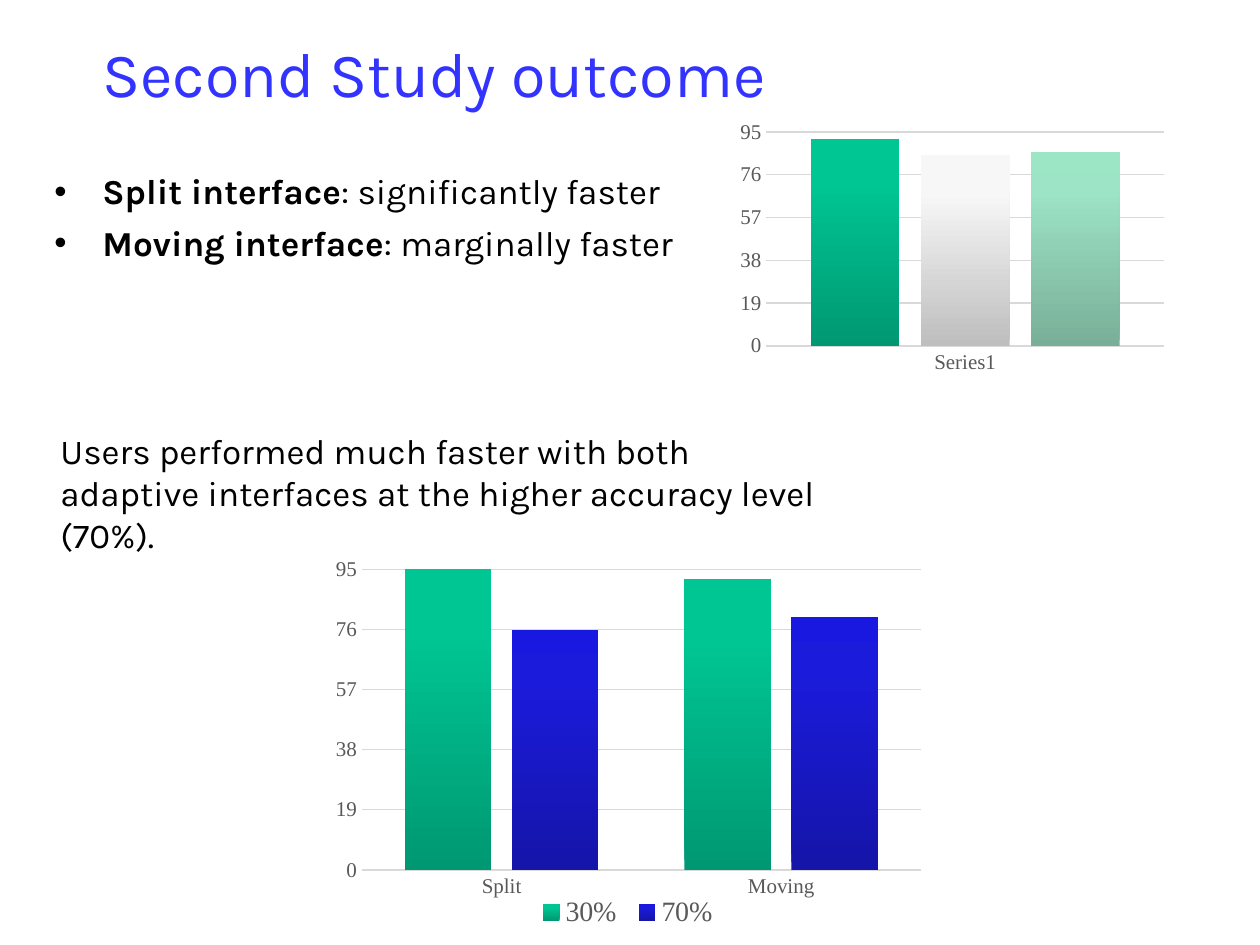
from dataclasses import dataclass

from lxml import etree
from pptx import Presentation
from pptx.chart.data import CategoryChartData
from pptx.dml.color import RGBColor
from pptx.enum.chart import XL_CHART_TYPE, XL_LEGEND_POSITION, XL_TICK_MARK
from pptx.enum.text import MSO_ANCHOR, MSO_AUTO_SIZE, PP_ALIGN
from pptx.oxml.ns import qn
from pptx.util import Emu, Pt

COLUMNS = XL_CHART_TYPE.COLUMN_CLUSTERED
BOTTOM = XL_LEGEND_POSITION.BOTTOM
NO_TICK = XL_TICK_MARK.NONE
MIDDLE = MSO_ANCHOR.MIDDLE
NO_FIT, GROW = MSO_AUTO_SIZE.NONE, MSO_AUTO_SIZE.SHAPE_TO_FIT_TEXT
CENTER = PP_ALIGN.CENTER
TITLE_ONLY = 5
EMU_PER_PX = 914400 / 126


@dataclass(frozen=True)
class Theme:
    text_font: str = "Karla"
    chart_font: str = "Times New Roman"
    title_size: int = 36
    body_size: int = 20
    axis_size: int = 12
    legend_size: int = 16
    title: str = "3333FF"
    body: str = "000000"
    label: str = "595959"
    grid: str = "D9D9D9"
    # Bar gradients, from the foot of the bar to its top
    green: tuple = ("009872", "00C694", "00C795")
    blue: tuple = ("1515A9", "1B1BDC", "1818E1")
    grey: tuple = ("BEBEBE", "F7F7F7", "F8F8F8")
    mint: tuple = ("79AF98", "9DE3C5", "9CE6C6")


THEME = Theme()
GRADIENT_STOPS = (0, 80, 100)


def px(length):
    return Emu(round(length * EMU_PER_PX))


def apply(target, formats):
    for name, value in formats.items():
        setattr(target, name, value)


def style_font(font, name, size, color, bold=False):
    apply(font, {"name": name, "size": Pt(size), "bold": bold})
    font.color.rgb = RGBColor.from_string(color)


def add_span(para, text, size, color, bold=False):
    span = para.add_run()
    span.text = text
    style_font(span.font, THEME.text_font, size, color, bold)


def set_indent(para, margin, first_line):
    properties = para._p.get_or_add_pPr()
    properties.set("marL", str(px(margin)))
    properties.set("indent", str(px(first_line)))
    return properties


def add_title(page, box, text):
    title = page.shapes.title
    apply(title, dict(zip(("left", "top", "width", "height"), map(px, box))))
    frame = title.text_frame
    apply(frame, {"vertical_anchor": MIDDLE, "auto_size": NO_FIT, "word_wrap": True})
    para = frame.paragraphs[0]
    para.alignment = CENTER
    add_span(para, text, THEME.title_size, THEME.title)


def add_text_frame(page, box, fit):
    frame = page.shapes.add_textbox(*map(px, box)).text_frame
    apply(frame, {"word_wrap": True, "auto_size": fit})
    return frame


def add_findings(page, box, findings):
    frame = add_text_frame(page, box, NO_FIT)
    for index, (subject, finding) in enumerate(findings):
        para = frame.add_paragraph() if index else frame.paragraphs[0]
        apply(para, {"line_spacing": 0.9, "space_before": Pt(8)})
        properties = set_indent(para, 48, -48)
        etree.SubElement(properties, qn("a:buFont"), typeface="Arial")
        etree.SubElement(properties, qn("a:buChar"), char="•")
        add_span(para, subject, THEME.body_size, THEME.body, bold=True)
        add_span(para, f": {finding}", THEME.body_size, THEME.body)


def add_conclusion(page, box, text):
    para = add_text_frame(page, box, GROW).paragraphs[0]
    set_indent(para, 92, 0)
    add_span(para, text, THEME.body_size, THEME.body)


def place_inside_chart(element, index, fractions, inner=False):
    """Give a plot area or legend a fixed place, in fractions of the chart."""
    for old in element.findall(qn("c:layout")):
        element.remove(old)
    layout = etree.Element(qn("c:layout"))
    manual = etree.SubElement(layout, qn("c:manualLayout"))
    if inner:
        etree.SubElement(manual, qn("c:layoutTarget"), val="inner")
    for mode in ("xMode", "yMode"):
        etree.SubElement(manual, qn(f"c:{mode}"), val="edge")
    for name, value in zip("xywh", fractions):
        etree.SubElement(manual, qn(f"c:{name}"), val=str(value))
    element.insert(index, layout)


def fill_bars(series, colors):
    series.format.fill.gradient()
    gradient = series._element.find(qn("c:spPr")).find(qn("a:gradFill"))
    for child in list(gradient):
        gradient.remove(child)
    stops = etree.SubElement(gradient, qn("a:gsLst"))
    for position, color in zip(GRADIENT_STOPS, colors):
        stop = etree.SubElement(stops, qn("a:gs"), pos=str(position * 1000))
        etree.SubElement(stop, qn("a:srgbClr"), val=color)
    etree.SubElement(gradient, qn("a:lin"), ang=str(270 * 60000), scaled="0")


def style_axes(chart):
    category, value = chart.category_axis, chart.value_axis
    for axis in (category, value):
        apply(axis, {"major_tick_mark": NO_TICK, "minor_tick_mark": NO_TICK})
        style_font(axis.tick_labels.font, THEME.chart_font, THEME.axis_size, THEME.label)
    apply(value, {"minimum_scale": 0, "maximum_scale": 95, "major_unit": 19,
                  "has_major_gridlines": True})
    apply(value.tick_labels, {"number_format": "#,##0", "number_format_is_linked": False})
    value.format.line.fill.background()
    for line, width in ((category.format.line, 1), (value.major_gridlines.format.line, 0.75)):
        line.color.rgb = RGBColor.from_string(THEME.grid)
        line.width = Pt(width)


def add_column_chart(page, box, categories, bars, plot_place, legend_place=None):
    """bars holds (name, values, gradient colors) for each series."""
    data = CategoryChartData()
    data.categories = categories
    for name, values, _ in bars:
        data.add_series(name, values)
    chart = page.shapes.add_chart(COLUMNS, *map(px, box), data).chart
    apply(chart, {"has_title": False, "has_legend": legend_place is not None})
    style_font(chart.font, THEME.chart_font, THEME.axis_size, THEME.label)
    style_axes(chart)

    plot = chart.plots[0]
    apply(plot, {"gap_width": 100, "overlap": -24, "vary_by_categories": False})
    for series, (_, _, colors) in zip(plot.series, bars):
        fill_bars(series, colors)
    plot_area = chart._chartSpace.find(qn("c:chart")).find(qn("c:plotArea"))
    place_inside_chart(plot_area, 0, plot_place, inner=True)

    if legend_place:
        legend = chart.legend
        apply(legend, {"position": BOTTOM, "include_in_layout": False})
        style_font(legend.font, THEME.chart_font, THEME.legend_size, THEME.label)
        place_inside_chart(legend._element, 1, legend_place)


def build_outcome_page(deck):
    page = deck.slides.add_slide(deck.slide_layouts[TITLE_ONLY])
    add_title(page, (-154, 25, 1176, 95), "Second Study outcome")
    add_findings(page, (42, 168, 1165, 106), (
        ("Split interface", "significantly faster"),
        ("Moving interface", "marginally faster"),
    ))
    add_conclusion(page, (-44, 423, 873, 97),
                   "Users performed much faster with both adaptive interfaces "
                   "at the higher accuracy level (70%).")
    add_column_chart(page, (243, 533, 699, 406), ("Split", "Moving"), (
        ("30%", (95, 92), THEME.green),
        ("70%", (76, 80), THEME.blue),
    ), (0.17, 0.09, 0.8, 0.74), legend_place=(0.41, 0.89, 0.28, 0.09))
    add_column_chart(page, (679, 102, 486, 301), ("",), (
        ("", (92,), THEME.green),
        ("", (85,), THEME.grey),
        ("", (86,), THEME.mint),
    ), (0.18, 0.1, 0.82, 0.71))


def main():
    deck = Presentation()
    apply(deck, {"slide_width": px(1260), "slide_height": px(945)})
    build_outcome_page(deck)
    deck.save("out.pptx")


if __name__ == "__main__":
    main()
